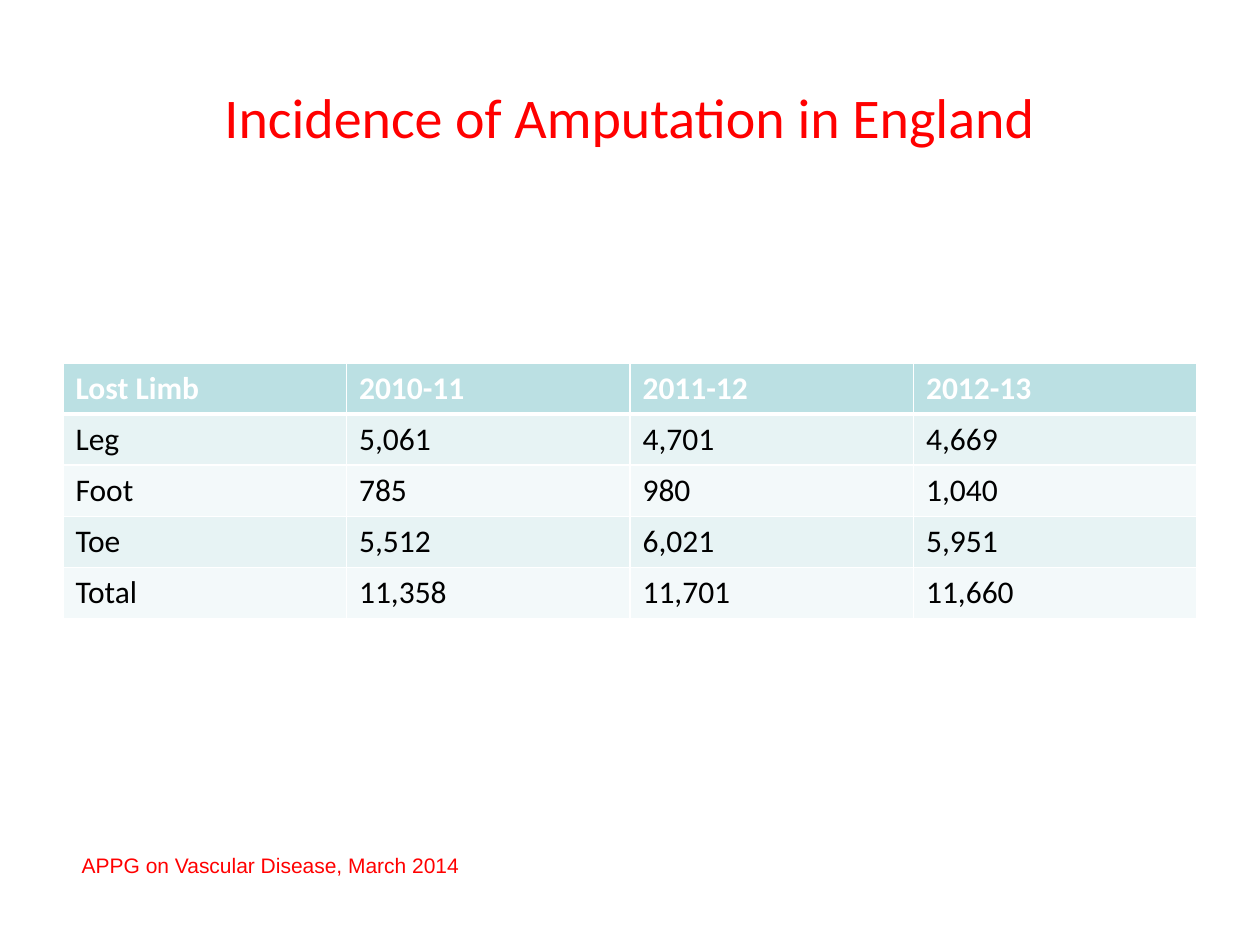
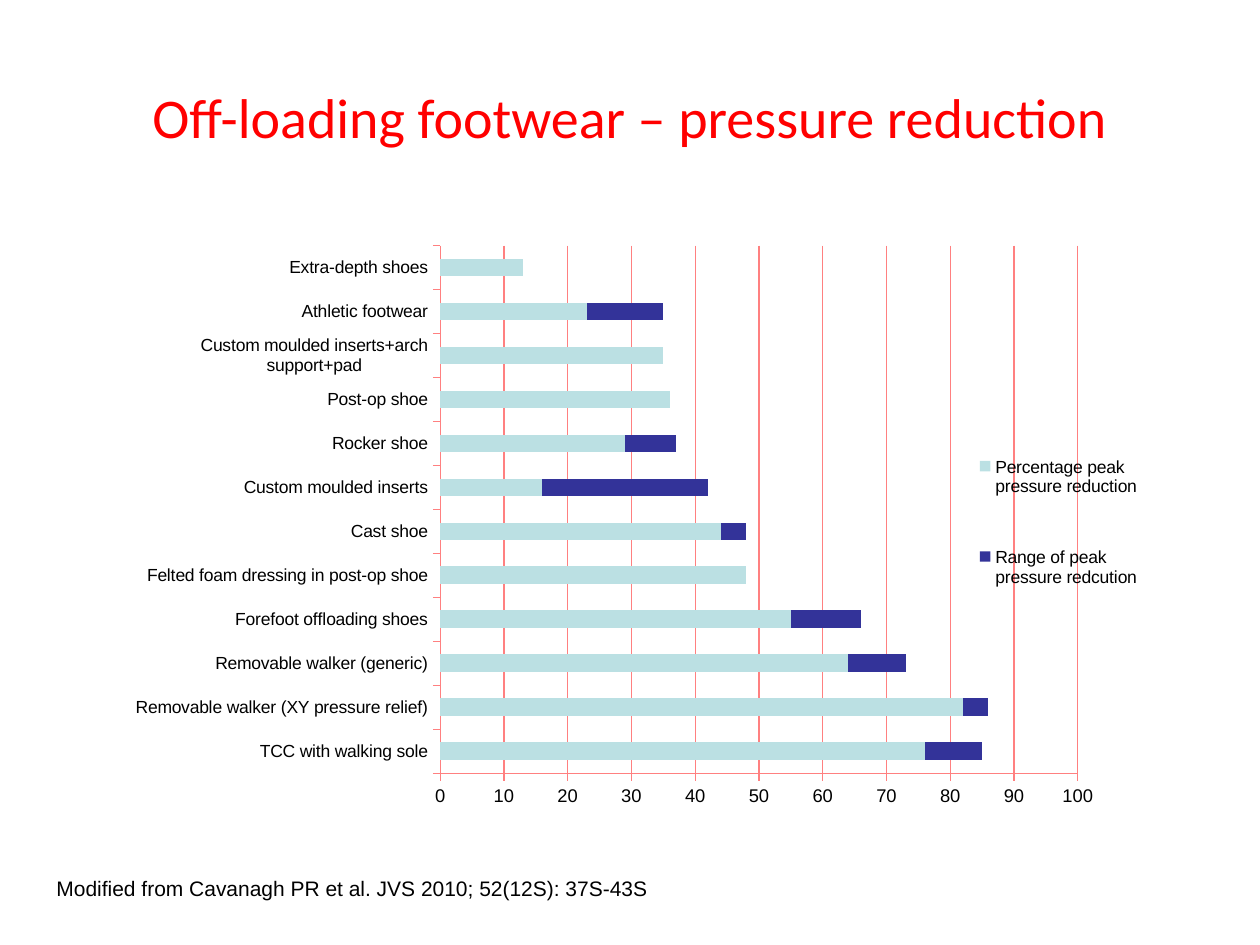
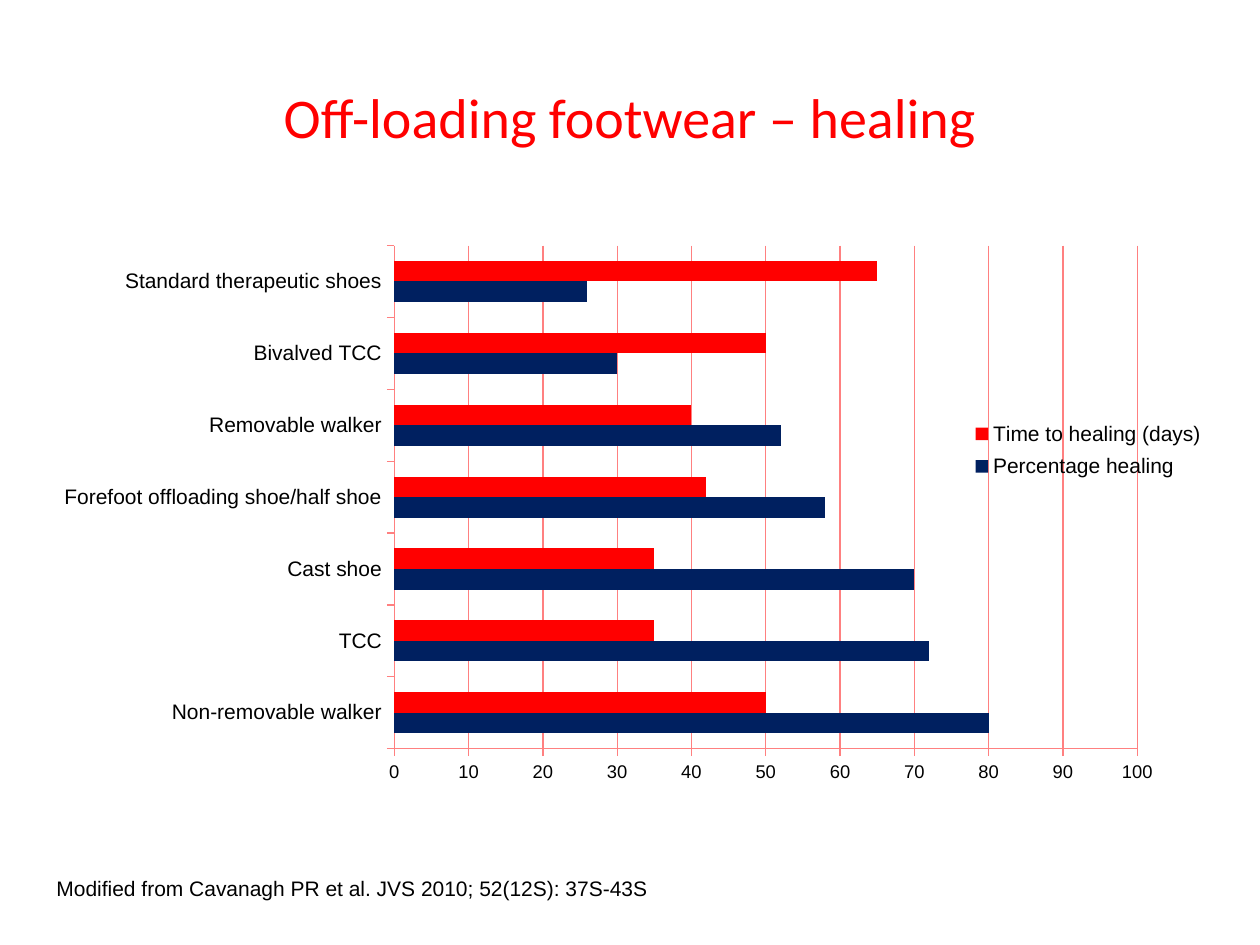
from lxml.etree import SubElement
from pptx import Presentation
from pptx.chart.data import CategoryChartData
from pptx.dml.color import RGBColor
from pptx.enum.chart import XL_CHART_TYPE, XL_LEGEND_POSITION, XL_TICK_MARK
from pptx.enum.text import MSO_ANCHOR, MSO_AUTO_SIZE, PP_ALIGN
from pptx.oxml.ns import qn
from pptx.util import Inches, Pt

COLORS = {
    "red": "FF0000", "black": "000000", "white": "FFFFFF", "axis": "FF8080",
    "aqua": "BBE0E3", "indigo": "333399", "navy": "002060",
    "odd_row": "E7F3F4", "even_row": "F3F9FA",
}

# Text formats
TITLE = {"name": "Calibri", "size": Pt(32), "color": "red"}
SOURCE = {"name": "Arial", "size": Pt(12), "color": "black"}
RED_SOURCE = SOURCE | {"color": "red"}
TABLE_BODY = {"name": "Calibri", "size": Pt(18), "bold": False, "color": "black"}
TABLE_HEADER = TABLE_BODY | {"bold": True, "color": "white"}

# Content
AMPUTATIONS = [
    ("Lost Limb", "2010-11", "2011-12", "2012-13"),
    ("Leg", "5,061", "4,701", "4,669"),
    ("Foot", "785", "980", "1,040"),
    ("Toe", "5,512", "6,021", "5,951"),
    ("Total", "11,358", "11,701", "11,660"),
]
CITATION = "Modified from Cavanagh PR et al. JVS 2010; 52(12S): 37S-43S"
CHART_SLIDES = [
    {
        "title": "Off-loading footwear – pressure reduction",
        "type": XL_CHART_TYPE.BAR_STACKED,
        "box": (0.98, 1.78, 8.11, 4.98),
        "plot": (0.31, 0.034, 0.624, 0.841),
        "legend": (0.83, 0.29, 0.17, 0.37),
        "label_size": 10,
        "overlap": 100,
        "series": [("Percentage peak pressure reduction", "aqua"),
                   ("Range of peak pressure redcution", "indigo")],
        "rows": [
            ("TCC with walking sole", 76, 9),
            ("Removable walker (XY pressure relief)", 82, 4),
            ("Removable walker (generic)", 64, 9),
            ("Forefoot offloading shoes", 55, 11),
            ("Felted foam dressing in post-op shoe", 48, 0),
            ("Cast shoe", 44, 4),
            ("Custom moulded inserts", 16, 26),
            ("Rocker shoe", 29, 8),
            ("Post-op shoe", 36, 0),
            ("Custom moulded inserts+arch support+pad", 35, 0),
            ("Athletic footwear", 23, 12),
            ("Extra-depth shoes", 13, 0),
        ],
    },
    {
        "title": "Off-loading footwear – healing",
        "type": XL_CHART_TYPE.BAR_CLUSTERED,
        "box": (0.2, 1.78, 9.45, 4.98),
        "plot": (0.31, 0.034, 0.624, 0.802),
        "legend": (0.81, 0.3, 0.19, 0.12),
        "label_size": 12,
        "overlap": 0,
        "series": [("Percentage healing", "navy"), ("Time to healing (days)", "red")],
        "rows": [
            ("Non-removable walker", 80, 50),
            ("TCC", 72, 35),
            ("Cast shoe", 70, 35),
            ("Forefoot offloading shoe/half shoe", 58, 42),
            ("Removable walker", 52, 40),
            ("Bivalved TCC", 30, 50),
            ("Standard therapeutic shoes", 26, 65),
        ],
    },
]


def rgb(name):
    return RGBColor.from_string(COLORS[name])


def set_font(font, text_format):
    for attribute, value in text_format.items():
        if attribute == "color":
            font.color.rgb = rgb(value)
        else:
            setattr(font, attribute, value)


def add_text(slide, box, text, text_format):
    shape = slide.shapes.add_textbox(*map(Inches, box))
    frame = shape.text_frame
    frame.word_wrap = True
    run = frame.paragraphs[0].add_run()
    run.text = text
    set_font(run.font, text_format)
    return frame


def add_titled_slide(presentation, title):
    slide = presentation.slides.add_slide(presentation.slide_layouts[6])
    frame = add_text(slide, (0.5, 0.3, 9, 1.25), title, TITLE)
    frame.vertical_anchor = MSO_ANCHOR.MIDDLE
    frame.paragraphs[0].alignment = PP_ALIGN.CENTER
    return slide


def add_source(slide, box, text, text_format):
    frame = add_text(slide, box, text, text_format)
    frame.auto_size = MSO_AUTO_SIZE.SHAPE_TO_FIT_TEXT


# Table
def set_borders(cell, widths):
    properties = cell._tc.get_or_add_tcPr()
    for side, width in widths.items():
        line = SubElement(properties, qn(f"a:ln{side}"), w=str(Pt(width)))
        fill = SubElement(line, qn("a:solidFill"))
        SubElement(fill, qn("a:srgbClr"), val=COLORS["white"])


def add_amputation_table(slide):
    frame = slide.shapes.add_table(len(AMPUTATIONS), len(AMPUTATIONS[0]),
                                   Inches(0.5), Inches(2.88), Inches(9), Inches(2.03))
    for row_index, values in enumerate(AMPUTATIONS):
        is_header = row_index == 0
        fill_name = "aqua" if is_header else ("even_row", "odd_row")[row_index % 2]
        borders = {"L": 1, "R": 1, "T": 3 if row_index == 1 else 1, "B": 3 if is_header else 1}
        for column_index, value in enumerate(values):
            cell = frame.table.cell(row_index, column_index)
            set_borders(cell, borders)
            cell.fill.solid()
            cell.fill.fore_color.rgb = rgb(fill_name)
            run = cell.text_frame.paragraphs[0].add_run()
            run.text = value
            set_font(run.font, TABLE_HEADER if is_header else TABLE_BODY)


# Charts
def set_layout(parent, position, box, inner=False):
    for old_layout in parent.findall(qn("c:layout")):
        parent.remove(old_layout)
    layout = parent.makeelement(qn("c:layout"))
    parent.insert(position, layout)
    manual = SubElement(layout, qn("c:manualLayout"))
    if inner:
        SubElement(manual, qn("c:layoutTarget"), val="inner")
    for mode in ("xMode", "yMode"):
        SubElement(manual, qn(f"c:{mode}"), val="edge")
    for name, value in zip("xywh", box):
        SubElement(manual, qn(f"c:{name}"), val=str(value))


def style_axis(axis, size):
    axis.major_tick_mark = XL_TICK_MARK.OUTSIDE
    axis.format.line.color.rgb = rgb("axis")
    axis.format.line.width = Pt(0.75)
    set_font(axis.tick_labels.font, SOURCE | {"size": Pt(size)})


def add_bar_chart(slide, content):
    data = CategoryChartData()
    data.categories = [row[0] for row in content["rows"]]
    for column, (name, _) in enumerate(content["series"], start=1):
        data.add_series(name, [row[column] for row in content["rows"]])
    chart = slide.shapes.add_chart(content["type"], *map(Inches, content["box"]), data).chart
    chart.has_title = False
    set_font(chart.font, RED_SOURCE | {"size": Pt(18)})

    plot = chart.plots[0]
    plot.gap_width = 150
    plot.overlap = content["overlap"]
    plot.vary_by_categories = False
    for series, (_, color) in zip(plot.series, content["series"]):
        series.format.fill.solid()
        series.format.fill.fore_color.rgb = rgb(color)

    style_axis(chart.category_axis, content["label_size"])
    value_axis = chart.value_axis
    style_axis(value_axis, 10.5)
    scale = {"minimum_scale": 0, "maximum_scale": 100, "major_unit": 10,
             "has_major_gridlines": True}
    for attribute, value in scale.items():
        setattr(value_axis, attribute, value)
    value_axis.major_gridlines.format.line.color.rgb = rgb("axis")
    value_axis.major_gridlines.format.line.width = Pt(0.75)

    chart.has_legend = True
    chart.legend.position = XL_LEGEND_POSITION.RIGHT
    chart.legend.include_in_layout = False
    set_font(chart.legend.font, SOURCE | {"size": Pt(content["label_size"])})
    set_layout(next(chart.element.iter(qn("c:plotArea"))), 0, content["plot"], inner=True)
    set_layout(next(chart.element.iter(qn("c:legend"))), 1, content["legend"])


def main():
    presentation = Presentation()
    presentation.slide_width = Inches(10)
    presentation.slide_height = Inches(7.5)

    slide = add_titled_slide(presentation, "Incidence of Amputation in England")
    add_amputation_table(slide)
    add_source(slide, (0.55, 6.72, 7.81, 0.3), "APPG on Vascular Disease, March 2014", RED_SOURCE)

    for content in CHART_SLIDES:
        slide = add_titled_slide(presentation, content["title"])
        add_source(slide, (0.35, 6.9, 7.56, 0.3), CITATION, SOURCE)
        add_bar_chart(slide, content)

    presentation.save("out.pptx")


if __name__ == "__main__":
    main()
